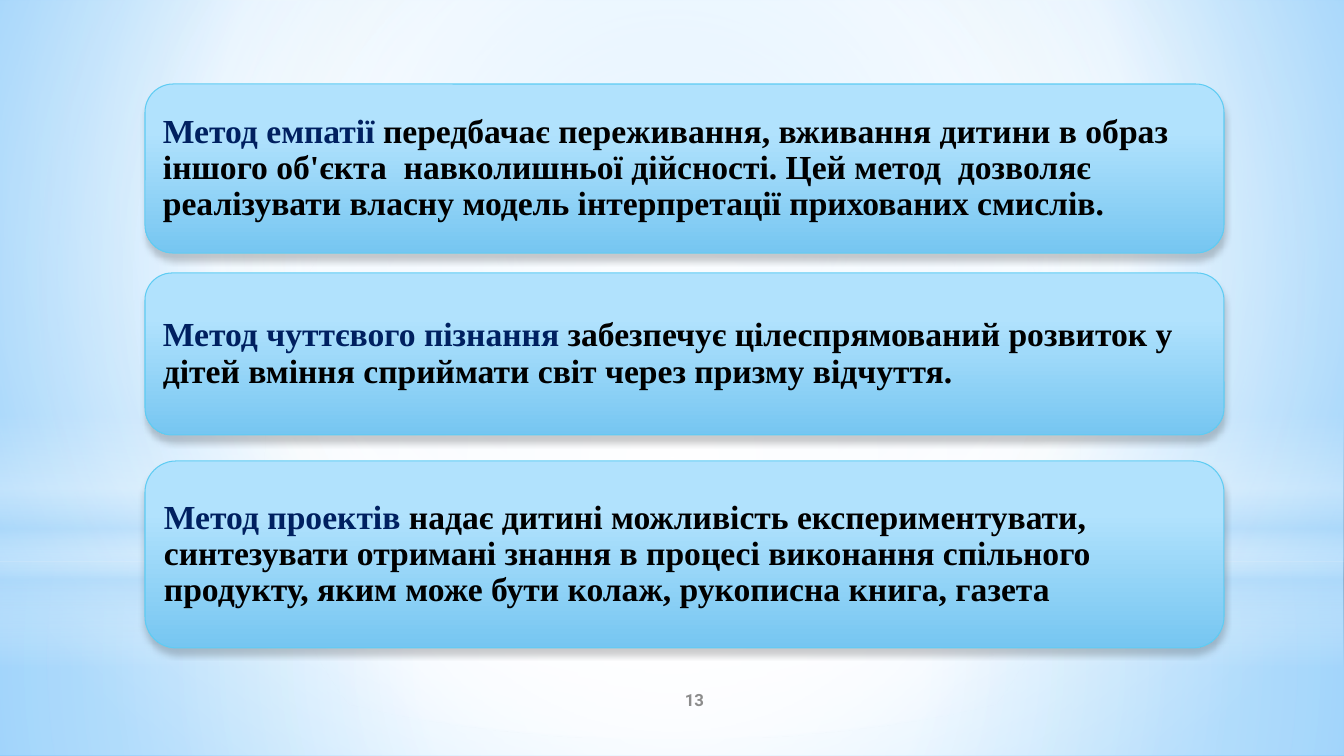
from dataclasses import dataclass

import lxml.etree
import pptx
import pptx.dml.color
import pptx.enum.shapes
import pptx.enum.text
import pptx.oxml.ns
import pptx.util

RGBColor = pptx.dml.color.RGBColor
Shapes = pptx.enum.shapes.MSO_SHAPE
Align = pptx.enum.text.PP_ALIGN
qn = pptx.oxml.ns.qn

EMU_PER_PX = 914400 / 100.8
SLIDE_W, SLIDE_H = 1344, 756

WHITE = RGBColor(0xFF, 0xFF, 0xFF)
BLACK = RGBColor(0x00, 0x00, 0x00)
SKY = RGBColor(0x9E, 0xD5, 0xFF)
AZURE = RGBColor(0x5B, 0xB9, 0xFF)
PALE_BLUE = RGBColor(0xB4, 0xDC, 0xFA)
CARD_TOP = RGBColor(0xB1, 0xE2, 0xFD)
CARD_BOTTOM = RGBColor(0x76, 0xC6, 0xF1)
CARD_EDGE = RGBColor(0x5E, 0xCC, 0xF3)
NAVY = RGBColor(0x00, 0x20, 0x60)
GREY = RGBColor(0x8C, 0x8C, 0x8C)

METHOD_FONT = {"name": "Times New Roman", "size": pptx.util.Pt(24), "bold": True}
NUMBER_FONT = {"name": "Roboto", "size": pptx.util.Pt(12), "bold": True}
CENTRE = (50, 50, 50, 50)


@dataclass(frozen=True)
class Stop:
    position: int
    colour: RGBColor
    opacity: int = 100


@dataclass(frozen=True)
class Gradient:
    """Circular around focus (left, top, right, bottom in %), else top to bottom."""
    stops: tuple[Stop, ...]
    focus: tuple[int, int, int, int] | None = None


@dataclass(frozen=True)
class Box:
    left: int
    top: int
    width: int
    height: int

    def emu(self) -> list[pptx.util.Emu]:
        return [px(n) for n in (self.left, self.top, self.width, self.height)]

    def shrunk(self, inset: int) -> "Box":
        return Box(self.left + inset, self.top + inset,
                   self.width - 2 * inset, self.height - 2 * inset)


@dataclass(frozen=True)
class Glow:
    kind: Shapes
    box: Box
    gradient: Gradient


@dataclass(frozen=True)
class Method:
    top: int
    height: int
    title: str
    description: str


BACKDROP = Gradient((Stop(0, SKY), Stop(60, WHITE), Stop(100, AZURE)), (20, 10, 20, 60))
CARD_FILL = Gradient((Stop(28, CARD_TOP), Stop(100, CARD_BOTTOM)))
CARD_LEFT, CARD_WIDTH = 145, 1079

GLOWS = (
    Glow(Shapes.RECTANGLE, Box(0, 562, SLIDE_W, 194), Gradient(
        (Stop(0, WHITE, 91), Stop(37, WHITE, 76), Stop(100, PALE_BLUE, 79)), CENTRE)),
    Glow(Shapes.RECTANGLE, Box(0, 0, SLIDE_W, 562), Gradient(
        (Stop(0, WHITE, 89), Stop(48, WHITE, 62), Stop(100, PALE_BLUE, 79)), CENTRE)),
    Glow(Shapes.RECTANGLE, Box(0, 415, SLIDE_W, 252), Gradient(
        (Stop(0, WHITE, 0), Stop(29, WHITE, 30), Stop(45, PALE_BLUE, 40),
         Stop(55, WHITE, 26), Stop(65, PALE_BLUE, 60), Stop(100, WHITE, 0)))),
    Glow(Shapes.OVAL, Box(0, 176, SLIDE_W, 562), Gradient(
        (Stop(0, WHITE), Stop(56, WHITE, 0)), CENTRE)),
)

METHODS = (
    Method(84, 169, "Метод емпатії ",
           "передбачає переживання, вживання дитини в образ іншого об'єкта  "
           "навколишньої дійсності. Цей метод  дозволяє реалізувати власну "
           "модель інтерпретації прихованих смислів."),
    Method(273, 162, "Метод чуттєвого пізнання ",
           "забезпечує цілеспрямований розвиток у дітей вміння сприймати світ "
           "через призму відчуття."),
    Method(461, 187, "Метод проектів ",
           "надає дитині можливість експериментувати, синтезувати отримані "
           "знання в процесі виконання спільного продукту, яким може бути "
           "колаж, рукописна книга, газета"),
)


def px(length: int) -> pptx.util.Emu:
    return pptx.util.Emu(round(length * EMU_PER_PX))


def add_xml(parent, tag: str, **attributes):
    return lxml.etree.SubElement(
        parent, qn(tag), {name: str(value) for name, value in attributes.items()})


def add_colour(parent, colour: RGBColor, opacity: int) -> None:
    rgb = add_xml(parent, "a:srgbClr", val=colour)
    if opacity < 100:
        add_xml(rgb, "a:alpha", val=opacity * 1000)


def fill_gradient(fill, element, gradient: Gradient) -> None:
    fill.gradient()
    grad = element.find(".//" + qn("a:gradFill"))
    for child in list(grad):
        grad.remove(child)
    stop_list = add_xml(grad, "a:gsLst")
    for stop in gradient.stops:
        add_colour(add_xml(stop_list, "a:gs", pos=stop.position * 1000),
                   stop.colour, stop.opacity)
    if gradient.focus:
        circle = add_xml(grad, "a:path", path="circle")
        sides = dict(zip("ltrb", (side * 1000 for side in gradient.focus)))
        add_xml(circle, "a:fillToRect", **sides)
    else:
        add_xml(grad, "a:lin", ang=90 * 60000, scaled=0)


def add_gradient_shape(slide, kind: Shapes, box: Box, gradient: Gradient):
    shape = slide.shapes.add_shape(kind, *box.emu())
    shape.shadow.inherit = False
    fill_gradient(shape.fill, shape._element, gradient)
    shape.line.fill.background()
    return shape


def add_text(slide, box: Box, runs: list[tuple[str, RGBColor]], font: dict,
             paragraph_format: dict) -> None:
    frame = slide.shapes.add_textbox(*box.emu()).text_frame
    frame_format = {"word_wrap": True,
                    "vertical_anchor": pptx.enum.text.MSO_ANCHOR.MIDDLE}
    for side in ("left", "right", "top", "bottom"):
        frame_format["margin_" + side] = px(10)
    paragraph = frame.paragraphs[0]
    formats = [(frame, frame_format), (paragraph, paragraph_format)]
    for text, colour in runs:
        run = paragraph.add_run()
        run.text = text
        run.font.color.rgb = colour
        formats.append((run.font, font))
    for target, values in formats:
        for name, value in values.items():
            setattr(target, name, value)


def add_method(slide, method: Method) -> None:
    box = Box(CARD_LEFT, method.top, CARD_WIDTH, method.height)
    card = add_gradient_shape(slide, Shapes.ROUNDED_RECTANGLE, box, CARD_FILL)
    card.line.color.rgb = CARD_EDGE
    card.line.width = pptx.util.Pt(0.75)
    shadow = add_xml(card._element.spPr.find(qn("a:effectLst")), "a:outerShdw",
                     blurRad=pptx.util.Pt(5), dist=pptx.util.Pt(4),
                     dir=90 * 60000, rotWithShape=0)
    add_colour(shadow, BLACK, 20)
    # Text stays inside the rounded corners
    add_text(slide, box.shrunk(round(method.height * 0.05)),
             [(method.title, NAVY), (method.description, BLACK)],
             METHOD_FONT, {"alignment": Align.LEFT, "line_spacing": 0.9})


def main() -> None:
    deck = pptx.Presentation()
    deck.slide_width, deck.slide_height = px(SLIDE_W), px(SLIDE_H)
    slide = deck.slides.add_slide(deck.slide_layouts[6])

    # Background and its light effects
    fill_gradient(slide.background.fill, slide._element, BACKDROP)
    for glow in GLOWS:
        add_gradient_shape(slide, glow.kind, glow.box, glow.gradient)

    # Slide number
    add_text(slide, Box(560, 680, 269, 40), [("13", GREY)],
             NUMBER_FONT, {"alignment": Align.CENTER})

    # Method cards
    for method in METHODS:
        add_method(slide, method)

    deck.save("out.pptx")


if __name__ == "__main__":
    main()
